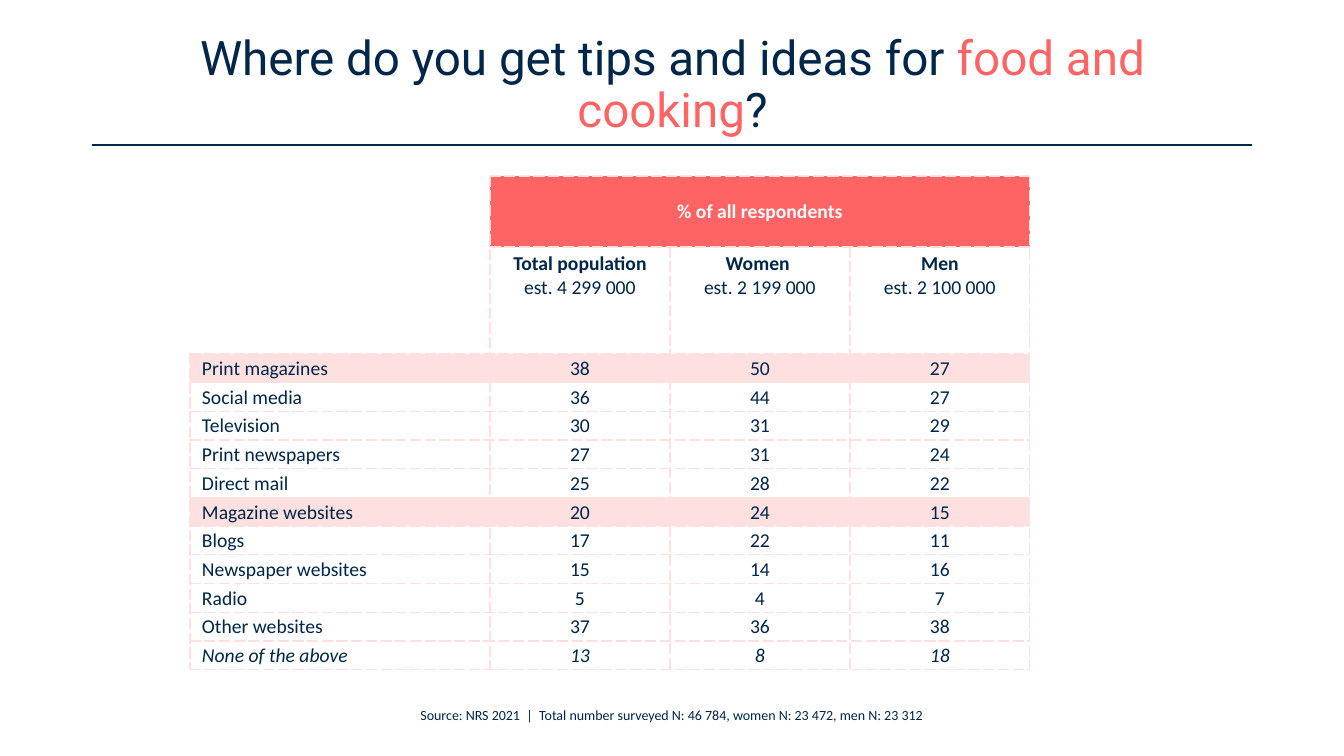
"""Build a survey slide about where people find food and cooking tips."""
from copy import deepcopy
from dataclasses import dataclass

from lxml.etree import SubElement
from pptx import Presentation
from pptx.dml.color import RGBColor
from pptx.enum.shapes import MSO_CONNECTOR as Connector
from pptx.enum.text import MSO_ANCHOR as Anchor, MSO_AUTO_SIZE as AutoSize, PP_ALIGN as Align
from pptx.oxml.ns import qn
from pptx.util import Emu, Pt

NAVY = RGBColor(0x00, 0x26, 0x49)
CORAL = RGBColor(0xFF, 0x64, 0x64)
BLUSH = RGBColor(0xFF, 0xE0, 0xE0)
OFF_WHITE = RGBColor(0xFE, 0xFC, 0xFF)
WHITE = RGBColor(0xFF, 0xFF, 0xFF)

PIXELS_PER_INCH = 100.8
COLUMN_WIDTHS = (300, 180, 180, 180)
BANNER_HEIGHT, GROUP_HEIGHT, BODY_HEIGHT = 71, 107, 316
LABEL_INDENT, CELL_INSET = 12, 1


@dataclass(frozen=True)
class Source:
    label: str
    shares: tuple[int, int, int]
    highlighted: bool = False
    italic: bool = False


TITLE_PARTS = (
    ("Where do you get tips and ideas for ", NAVY),
    ("food and cooking", CORAL),
    ("?", NAVY),
)
GROUPS = (
    "Total population\vest. 4 299 000",
    "Women \vest. 2 199 000",
    "Men\vest. 2 100 000",
)
SOURCES = (
    Source("Print magazines", (38, 50, 27), highlighted=True),
    Source("Social media", (36, 44, 27)),
    Source("Television", (30, 31, 29)),
    Source("Print newspapers", (27, 31, 24)),
    Source("Direct mail", (25, 28, 22)),
    Source("Magazine websites", (20, 24, 15), highlighted=True),
    Source("Blogs", (17, 22, 11)),
    Source("Newspaper websites", (15, 14, 16)),
    Source("Radio", (5, 4, 7)),
    Source("Other websites", (37, 36, 38)),
    Source("None of the above", (13, 8, 18), italic=True),
)


def px(length: int) -> Emu:
    return Emu(round(length * 914400 / PIXELS_PER_INCH))


def box(*lengths: int) -> tuple[Emu, ...]:
    return tuple(px(length) for length in lengths)


def style_run(run, size: int, color: RGBColor, name: str = "Calibri",
              bold: bool = False, italic: bool = False) -> None:
    font = run.font
    font.name, font.size, font.bold, font.italic = name, Pt(size), bold, italic
    font.color.rgb = color


def set_borders(cell, hidden: str = "") -> None:
    properties = cell._tc.get_or_add_tcPr()
    for side in "LRTB":
        line = SubElement(properties, qn(f"a:ln{side}"), w=str(Pt(1)))
        if side in hidden:
            SubElement(line, qn("a:noFill"))
            continue
        fill = SubElement(line, qn("a:solidFill"))
        SubElement(fill, qn("a:srgbClr"), val=str(BLUSH))
        SubElement(line, qn("a:prstDash"), val="sysDash")


def set_fill(cell, color: RGBColor | None) -> None:
    if color is None:
        cell.fill.background()
    else:
        cell.fill.solid()
        cell.fill.fore_color.rgb = color


def write_cell(cell, text: str, color: RGBColor = NAVY, align: Align = Align.CENTER,
               bold: bool = False, italic: bool = False) -> None:
    cell.text_frame.text = text
    paragraph = cell.text_frame.paragraphs[0]
    paragraph.alignment = align
    for run in paragraph.runs:
        style_run(run, 14, color, bold=bold, italic=italic)


def write_group(cell, text: str) -> None:
    write_cell(cell, text, bold=True)
    paragraph = cell.text_frame.paragraphs[0]
    name, estimate = paragraph.runs
    estimate.font.bold = False
    paragraph._p.find(qn("a:br")).append(deepcopy(name._r.rPr))


def write_source(cells, source: Source) -> None:
    for column, (cell, text) in enumerate(zip(cells, (source.label, *source.shares))):
        align = Align.CENTER if column else Align.LEFT
        write_cell(cell, str(text), align=align, italic=source.italic)
        cell.vertical_anchor = Anchor.MIDDLE
        cell.margin_left = px(CELL_INSET if column else LABEL_INDENT)
        cell.margin_right = cell.margin_top = px(CELL_INSET)
        cell.margin_bottom = 0
        set_fill(cell, BLUSH if source.highlighted else None)


def add_title(slide) -> None:
    title = slide.shapes.title
    title.left, title.top, title.width, title.height = box(93, 32, 1159, 108)
    frame = title.text_frame
    frame.word_wrap, frame.auto_size = True, AutoSize.NONE
    frame.vertical_anchor = Anchor.MIDDLE
    paragraph = frame.paragraphs[0]
    paragraph.alignment, paragraph.line_spacing = Align.CENTER, 0.9
    for text, color in TITLE_PARTS:
        run = paragraph.add_run()
        run.text = text
        style_run(run, 34, color, name="Roboto")


def add_rule(slide) -> None:
    rule = slide.shapes.add_connector(Connector.STRAIGHT, *box(92, 145, 1252, 145))
    rule.line.color.rgb, rule.line.width = NAVY, Pt(1)
    SubElement(rule._element.spPr, qn("a:effectLst"))


def add_survey_table(slide) -> None:
    height = BANNER_HEIGHT + GROUP_HEIGHT + BODY_HEIGHT
    table = slide.shapes.add_table(
        len(SOURCES) + 2, len(COLUMN_WIDTHS), *box(190, 176, sum(COLUMN_WIDTHS), height)).table
    table.first_row = table.horz_banding = False
    for column, width in zip(table.columns, COLUMN_WIDTHS):
        column.width = px(width)
    source_height = Emu(px(BODY_HEIGHT) // len(SOURCES))
    heights = [px(BANNER_HEIGHT), px(GROUP_HEIGHT)] + [source_height] * len(SOURCES)
    for row_number, (row, row_height) in enumerate(zip(table.rows, heights)):
        row.height = row_height
        for column_number, cell in enumerate(row.cells):
            in_corner = row_number < 2 and column_number == 0
            set_borders(cell, hidden="LT" if in_corner else "")
            set_fill(cell, WHITE if in_corner else None)

    table.cell(0, 0).merge(table.cell(1, 0))
    banner = table.cell(0, 1)
    banner.merge(table.cell(0, 3))
    write_cell(banner, "% of all respondents", color=OFF_WHITE, bold=True)
    banner.vertical_anchor = Anchor.MIDDLE
    set_fill(banner, CORAL)
    for column_number, group in enumerate(GROUPS, start=1):
        write_group(table.cell(1, column_number), group)
    for row_number, source in enumerate(SOURCES, start=2):
        write_source(table.rows[row_number].cells, source)


def add_source_note(slide) -> None:
    frame = slide.shapes.add_textbox(*box(405, 702, 533, 27)).text_frame
    frame.text = "Source: NRS 2021  |  Total number surveyed N: 46 784, women N: 23 472, men N: 23 312"
    frame.word_wrap, frame.auto_size = False, AutoSize.SHAPE_TO_FIT_TEXT
    paragraph = frame.paragraphs[0]
    paragraph.alignment = Align.CENTER
    style_run(paragraph.runs[0], 10, NAVY)


def main() -> None:
    presentation = Presentation()
    presentation.slide_width, presentation.slide_height = box(1344, 756)
    slide = presentation.slides.add_slide(presentation.slide_layouts[5])
    add_title(slide)
    add_survey_table(slide)
    add_rule(slide)
    add_source_note(slide)
    presentation.save("out.pptx")


if __name__ == "__main__":
    main()
